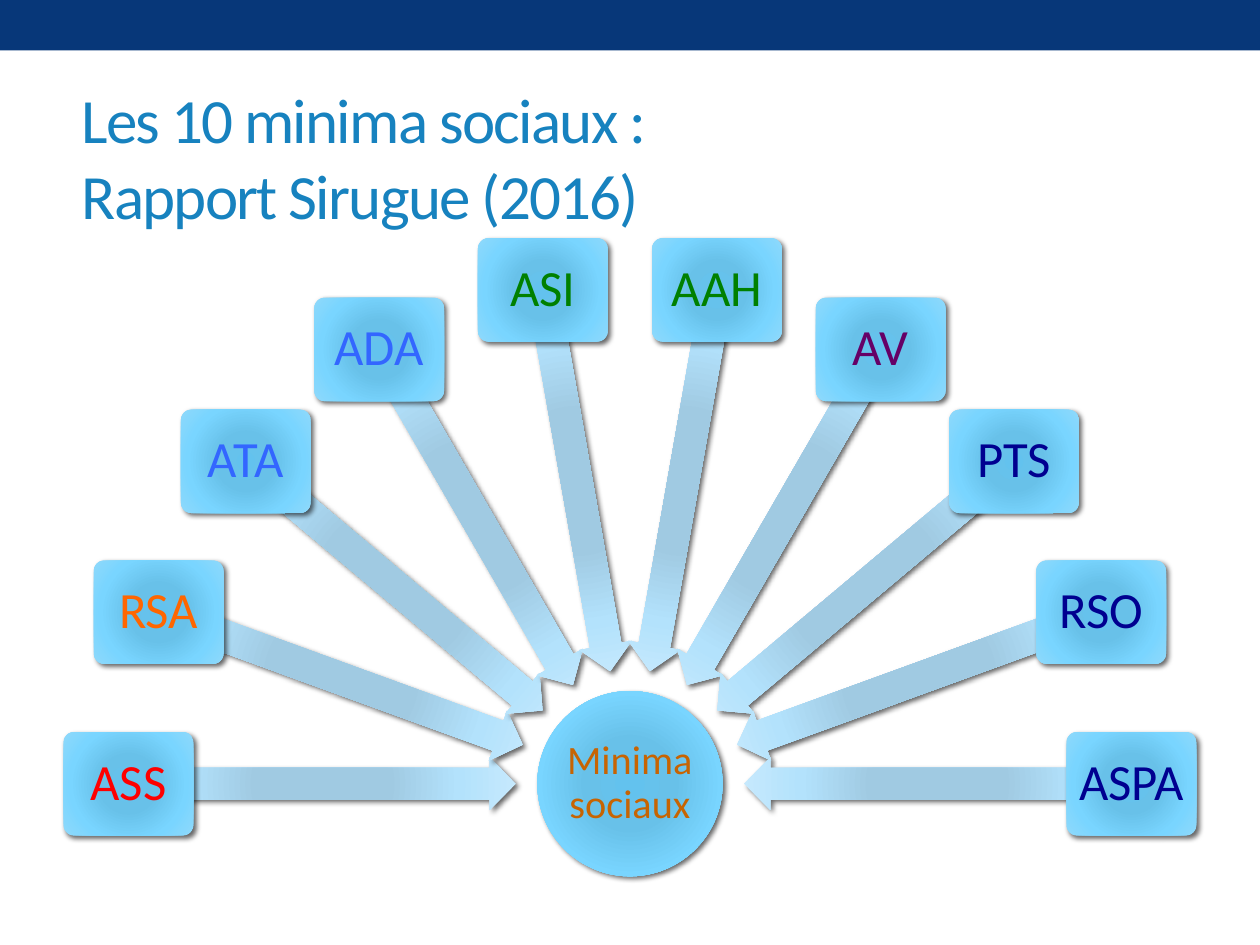
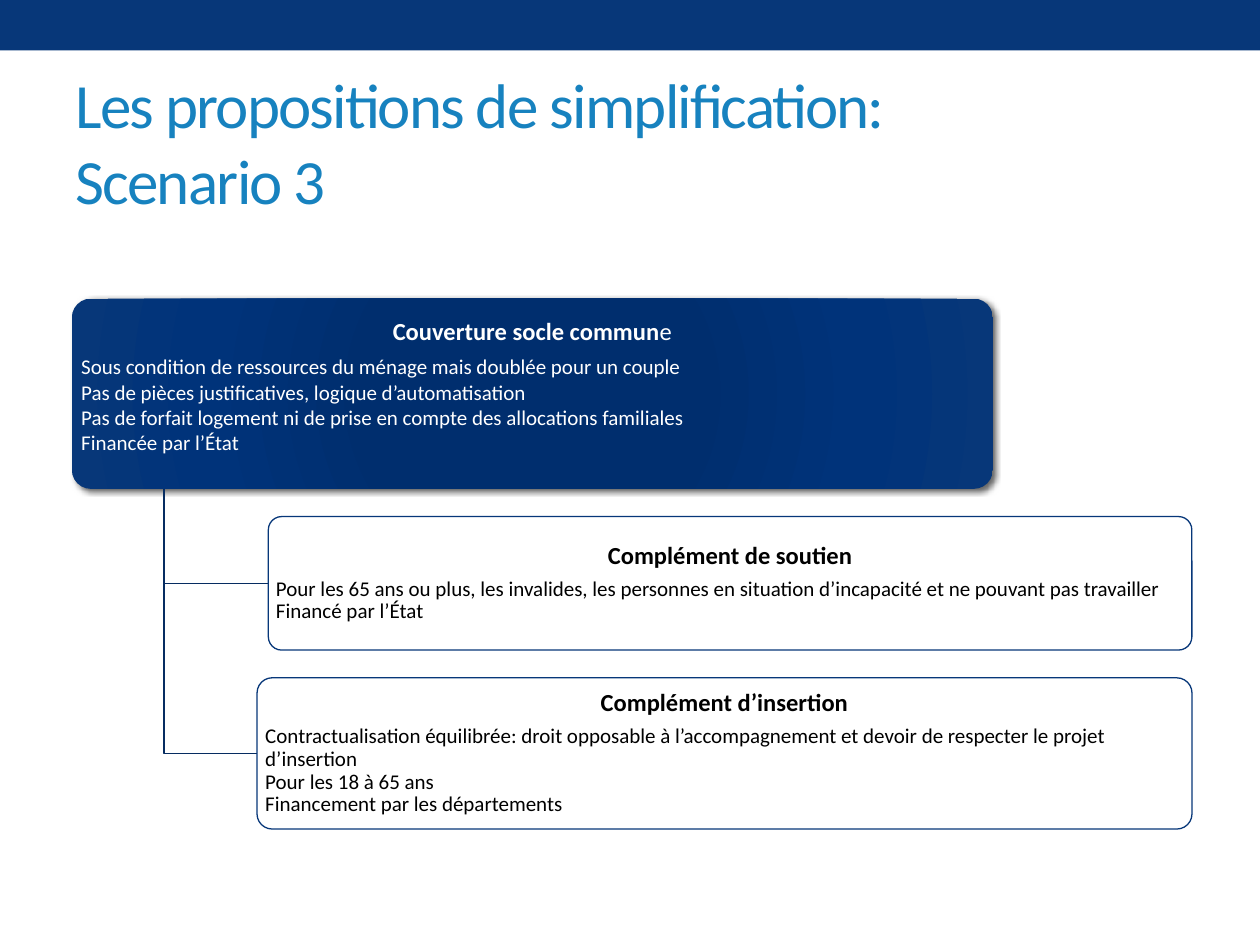
"""Build two slides on the French minimum social benefits and their simplification."""
import math
from dataclasses import dataclass

import pptx
import pptx.dml.color
import pptx.enum.shapes
import pptx.enum.text
import pptx.oxml
import pptx.oxml.ns
import pptx.util
from pptx.dml.color import RGBColor
from pptx.enum.shapes import MSO_SHAPE
from pptx.enum.text import PP_ALIGN
from pptx.util import Inches

FONT = "Calibri"
NAVY = RGBColor(0x07, 0x37, 0x79)
LINK_NAVY = RGBColor(0x06, 0x2C, 0x61)
TITLE_BLUE = RGBColor(0x17, 0x82, 0xBF)
WHITE = RGBColor(0xFF, 0xFF, 0xFF)
BLACK = RGBColor(0x00, 0x00, 0x00)
RED = RGBColor(0xFF, 0x00, 0x00)
ORANGE = RGBColor(0xFF, 0x66, 0x00)
BRONZE = RGBColor(0xC7, 0x64, 0x02)
BLUE = RGBColor(0x33, 0x66, 0xFF)
GREEN = RGBColor(0x00, 0x80, 0x00)
PURPLE = RGBColor(0x66, 0x00, 0x66)
INDIGO = RGBColor(0x00, 0x00, 0x90)

STOP_POSITIONS = (0, 34, 70, 100)
NODE_GRADIENT = tuple(map(RGBColor.from_string, ("63C2EE", "68C1E9", "79D5FF", "8FD9FB")))
ARROW_GRADIENT = tuple(map(RGBColor.from_string, ("9ECBE4", "A0CAE2", "B3E2FC", "C6E9FD")))
NAVY_GRADIENT = tuple(map(RGBColor.from_string, ("002E6E", "002E6E", "00337A", "073779")))
Gradient = tuple[RGBColor, ...]

HUB_X, HUB_Y, HUB_SIZE = 5.0, 6.22, 1.47
NODE_RADIUS, NODE_WIDTH, NODE_HEIGHT = 3.98, 1.03, 0.82
ARROW_RADIUS, ARROW_WIDTH, ARROW_HEIGHT = 2.44, 3.07, 0.42


@dataclass(frozen=True)
class Box:
    """A rectangle in inches."""

    left: float
    top: float
    width: float
    height: float

    @classmethod
    def centred(cls, x: float, y: float, width: float, height: float) -> "Box":
        """Make a box around a centre point."""
        return cls(x - width / 2, y - height / 2, width, height)

    def lengths(self) -> tuple:
        """Give left, top, width and height as lengths."""
        return tuple(Inches(v) for v in (self.left, self.top, self.width, self.height))


@dataclass(frozen=True)
class Benefit:
    """A benefit placed on the fan."""

    name: str
    colour: RGBColor


@dataclass(frozen=True)
class Card:
    """A rounded panel with a heading and plain lines."""

    box: Box
    heading: str
    lines: tuple[str, ...]
    colour: RGBColor = BLACK
    heading_tail: str = ""
    line_spacing: float = 0.9
    bottom_inset: float = 0.02
    gradient: Gradient = ()


BENEFITS = (
    Benefit("ASS", RED), Benefit("RSA", ORANGE), Benefit("ATA", BLUE),
    Benefit("ADA", BLUE), Benefit("ASI", GREEN), Benefit("AAH", GREEN),
    Benefit("AV", PURPLE), Benefit("PTS", INDIGO), Benefit("RSO", INDIGO),
    Benefit("ASPA", INDIGO),
)

BASE_CARD = Card(
    Box(0.57, 2.37, 7.31, 1.51),
    "Couverture socle commun",
    (
        "Sous condition de ressources du ménage mais doublée pour un couple",
        "Pas de pièces justificatives, logique d’automatisation",
        "Pas de forfait logement ni de prise en compte des allocations familiales",
        "Financée par l’État",
    ),
    WHITE, "e", 1.0, 0.13, NAVY_GRADIENT,
)
SUPPLEMENT_CARDS = (
    Card(
        Box(2.13, 4.1, 7.33, 1.06),
        "Complément de soutien",
        (
            "Pour les 65 ans ou plus, les invalides, les personnes en situation "
            "d’incapacité et ne pouvant pas travailler",
            "Financé par l’État",
        ),
    ),
    Card(
        Box(2.04, 5.38, 7.42, 1.2),
        "Complément d’insertion",
        (
            "Contractualisation équilibrée: droit opposable à l’accompagnement "
            "et devoir de respecter le projet d’insertion",
            "Pour les 18 à 65 ans",
            "Financement par les départements",
        ),
    ),
)


def add_plain_shape(slide, kind: MSO_SHAPE, box: Box, fill: RGBColor):
    """Add a flat shape without outline."""
    shape = slide.shapes.add_shape(kind, *box.lengths())
    shape.shadow.inherit = False
    shape.fill.solid()
    shape.fill.fore_color.rgb = fill
    shape.line.fill.background()
    return shape


def apply_relief(shape, gradient: Gradient) -> None:
    """Give a shape a circular gradient and a soft shadow."""
    namespace = pptx.oxml.ns.nsdecls("a")
    stops = "".join(
        f'<a:gs pos="{position * 1000}"><a:srgbClr val="{colour}"/></a:gs>'
        for position, colour in zip(STOP_POSITIONS, gradient)
    )
    properties = shape.element.spPr
    properties.replace(
        properties.find(pptx.oxml.ns.qn("a:solidFill")),
        pptx.oxml.parse_xml(
            f'<a:gradFill {namespace} rotWithShape="1"><a:gsLst>{stops}</a:gsLst>'
            '<a:path path="circle"><a:fillToRect l="100000" t="100000" r="100000" '
            'b="100000"/></a:path></a:gradFill>'
        ),
    )
    properties.find(pptx.oxml.ns.qn("a:effectLst")).append(
        pptx.oxml.parse_xml(
            f'<a:outerShdw {namespace} blurRad="38100" dist="25400" dir="2700000" '
            'rotWithShape="0"><a:srgbClr val="000000"><a:alpha val="60000"/>'
            "</a:srgbClr></a:outerShdw>"
        )
    )


def add_relief_shape(slide, kind: MSO_SHAPE, box: Box, gradient: Gradient):
    """Add a shape with gradient and shadow."""
    shape = add_plain_shape(slide, kind, box, gradient[0])
    apply_relief(shape, gradient)
    return shape


def set_insets(text_frame, horizontal: float, top: float, bottom: float) -> None:
    """Set wrapping, middle anchor and inner margins."""
    text_frame.word_wrap = True
    text_frame.vertical_anchor = pptx.enum.text.MSO_ANCHOR.MIDDLE
    text_frame.margin_left = text_frame.margin_right = Inches(horizontal)
    text_frame.margin_top, text_frame.margin_bottom = Inches(top), Inches(bottom)


def format_paragraph(paragraph, size: float, colour: RGBColor,
                     alignment: PP_ALIGN = PP_ALIGN.LEFT,
                     spacing: float = 1.0, bold: bool = False) -> None:
    """Format a paragraph and all its runs."""
    paragraph.alignment = alignment
    paragraph.line_spacing = spacing
    for run in paragraph.runs:
        run.font.name = FONT
        run.font.size = pptx.util.Pt(size)
        run.font.bold = bold
        run.font.color.rgb = colour


def add_label(shape, text: str, size: float, colour: RGBColor, inset: float) -> None:
    """Write a centred label inside a shape."""
    set_insets(shape.text_frame, inset, inset, inset)
    shape.text_frame.text = text
    format_paragraph(shape.text_frame.paragraphs[0], size, colour, PP_ALIGN.CENTER, 0.9)


def add_titled_slide(presentation, title: str, box: Box):
    """Add a blank slide with the top band and a title."""
    slide = presentation.slides.add_slide(presentation.slide_layouts[6])
    add_plain_shape(slide, MSO_SHAPE.RECTANGLE, Box(0, 0, 10, 0.4), NAVY)
    text_frame = slide.shapes.add_textbox(*box.lengths()).text_frame
    set_insets(text_frame, 0.1, 0.05, 0.05)
    text_frame.text = title
    paragraph = text_frame.paragraphs[0]
    format_paragraph(paragraph, 36, TITLE_BLUE)
    for run in paragraph.runs:
        run.font._element.set("spc", "-100")
    return slide


def add_benefit(slide, benefit: Benefit, turn: float) -> None:
    """Add a benefit and its arrow, turned clockwise from the left of the hub."""
    cosine, sine = math.cos(math.radians(turn)), math.sin(math.radians(turn))

    def box_at(radius: float, width: float, height: float) -> Box:
        """Place a box at a distance from the hub."""
        return Box.centred(HUB_X - radius * cosine, HUB_Y - radius * sine, width, height)

    arrow = add_relief_shape(slide, MSO_SHAPE.LEFT_ARROW,
                             box_at(ARROW_RADIUS, ARROW_WIDTH, ARROW_HEIGHT), ARROW_GRADIENT)
    arrow.adjustments[0], arrow.adjustments[1] = 0.6, 0.5
    arrow.rotation = (180 + turn) % 360
    node = add_relief_shape(slide, MSO_SHAPE.ROUNDED_RECTANGLE,
                            box_at(NODE_RADIUS, NODE_WIDTH, NODE_HEIGHT), NODE_GRADIENT)
    node.adjustments[0] = 0.1
    add_label(node, benefit.name, 29, benefit.colour, 0.06)


def add_card(slide, card: Card) -> None:
    """Add a panel with its heading and lines."""
    shape = add_plain_shape(slide, MSO_SHAPE.ROUNDED_RECTANGLE, card.box, WHITE)
    shape.adjustments[0] = 0.1
    if card.gradient:
        apply_relief(shape, card.gradient)
    else:
        shape.line.color.rgb = NAVY
        shape.line.width = pptx.util.Pt(0.75)
    text_frame = shape.text_frame
    set_insets(text_frame, 0.03, 0.02, card.bottom_inset)
    text_frame.text = "\n".join((card.heading, *card.lines))
    heading, *lines = text_frame.paragraphs
    if card.heading_tail:
        heading.add_run().text = card.heading_tail
    format_paragraph(heading, 14, card.colour, PP_ALIGN.CENTER, 0.9, True)
    heading.space_after = pptx.util.Pt(4.9)
    for run in heading.runs[1:]:
        run.font.bold = False
    for line in lines:
        format_paragraph(line, 12, card.colour, spacing=card.line_spacing)


def add_link(slide, parent: Box, child: Box) -> None:
    """Draw a bent line from under the parent to the child's left side."""
    x = Inches(parent.left + parent.width / 10)
    y = Inches(child.top + child.height / 2)
    builder = slide.shapes.build_freeform(x, Inches(parent.top + parent.height))
    builder.add_line_segments([(x, y), (Inches(child.left), y)], close=False)
    link = builder.convert_to_shape()
    link.shadow.inherit = False
    link.fill.background()
    link.line.color.rgb = LINK_NAVY
    link.line.width = pptx.util.Pt(0.75)


def build_benefits_slide(presentation) -> None:
    """Draw the fan of benefits around the hub."""
    slide = add_titled_slide(presentation, "Les 10 minima sociaux :\vRapport Sirugue (2016)",
                             Box(0.55, 0.63, 8.26, 1.22))
    hub = add_relief_shape(slide, MSO_SHAPE.OVAL,
                           Box.centred(HUB_X, HUB_Y, HUB_SIZE, HUB_SIZE), NODE_GRADIENT)
    add_label(hub, "Minima sociaux", 23, BRONZE, 0.02)
    step = 180 / (len(BENEFITS) - 1)
    for index, benefit in enumerate(BENEFITS):
        add_benefit(slide, benefit, index * step)


def build_scenario_slide(presentation) -> None:
    """Draw the common base and its supplements."""
    slide = add_titled_slide(presentation, "Les propositions de simplification:\vScenario 3",
                             Box(0.5, 0.58, 9, 1.08))
    add_card(slide, BASE_CARD)
    for card in SUPPLEMENT_CARDS:
        add_link(slide, BASE_CARD.box, card.box)
        add_card(slide, card)


def main() -> None:
    """Build and save the presentation."""
    presentation = pptx.Presentation()
    presentation.slide_width, presentation.slide_height = Inches(10), Inches(7.5)
    build_benefits_slide(presentation)
    build_scenario_slide(presentation)
    presentation.save("out.pptx")


if __name__ == "__main__":
    main()
